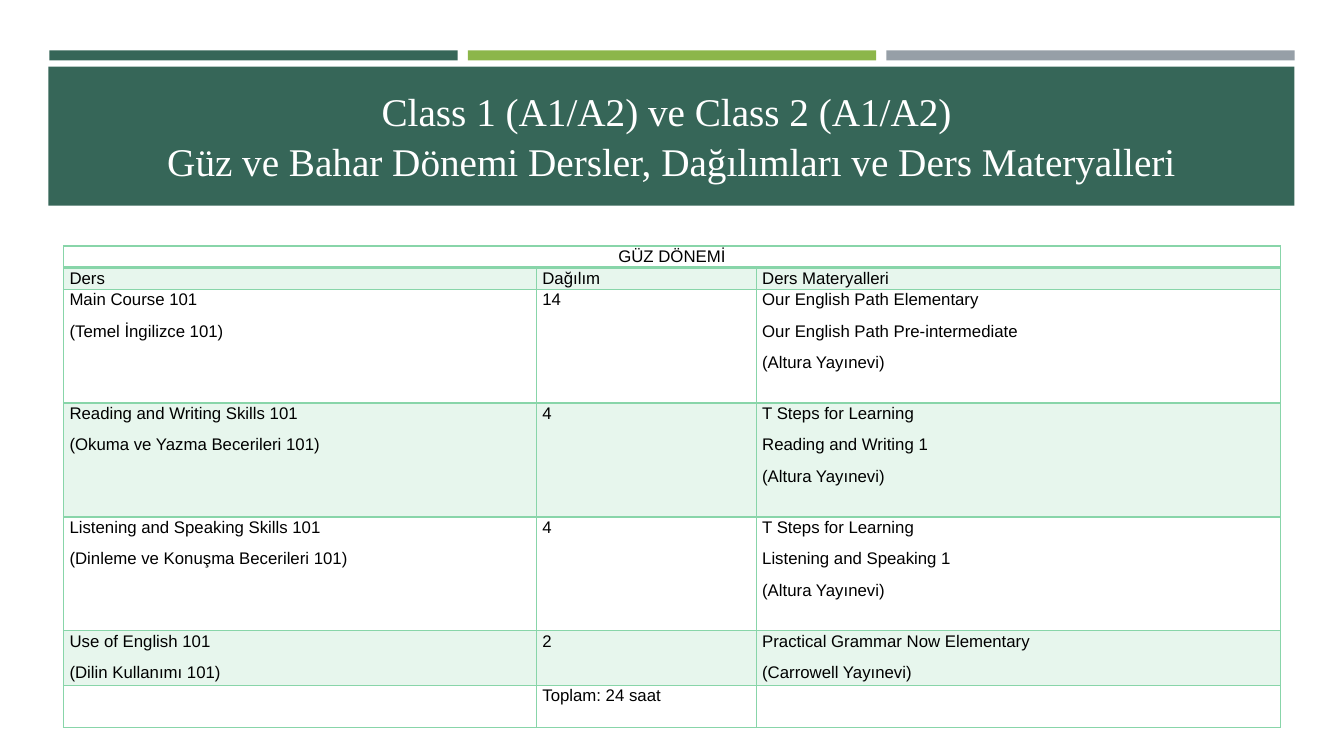
from lxml import etree
from pptx import Presentation
from pptx.dml.color import RGBColor
from pptx.enum.shapes import MSO_SHAPE as SHAPE
from pptx.enum.text import MSO_ANCHOR as ANCHOR, PP_ALIGN as ALIGN
from pptx.oxml.ns import qn
from pptx.util import Inches, Pt


def rgb(value):
    return RGBColor.from_string(value)


def apply(target, values):
    for name, value in values.items():
        setattr(target, name, value)


class SlideBuilder:
    """Holds the style and the current slide."""

    green, lime, grey, mint = "366658", "8CB64A", "969FA7", "88D5A9"
    title_font = {"name": "Times New Roman", "size": Pt(28)}
    cell_font = {"name": "Arial", "size": Pt(12), "bold": False}
    cell_margins = {"margin_left": Inches(0.06), "margin_right": Inches(0.06),
                    "margin_top": 0, "margin_bottom": 0}

    def __init__(self, prs):
        self.s = prs.slides.add_slide(prs.slide_layouts[6])

    def bar(self, box, color):
        sp = self.s.shapes.add_shape(SHAPE.RECTANGLE, *map(Inches, box))
        sp.shadow.inherit = False
        sp.fill.solid()
        sp.fill.fore_color.rgb = rgb(color)
        sp.line.fill.background()

    def title(self, box, lines):
        tf = self.s.shapes.add_textbox(*map(Inches, box)).text_frame
        apply(tf, {"word_wrap": True, "vertical_anchor": ANCHOR.BOTTOM})
        p = tf.paragraphs[0]
        apply(p, {"alignment": ALIGN.CENTER, "line_spacing": 1.07, "space_after": Pt(8)})
        for i, line in enumerate(lines):
            if i:
                p.add_line_break()
            r = p.add_run()
            r.text = line
            apply(r.font, self.title_font)
            r.font.color.rgb = rgb("FFFFFF")

    def border(self, cell, side, width):
        ln = etree.SubElement(cell._tc.get_or_add_tcPr(), qn(f"a:ln{side}"), w=str(Pt(width)))
        fill = etree.SubElement(ln, qn("a:solidFill"))
        etree.SubElement(fill, qn("a:srgbClr"), val=self.mint)

    def cell(self, cell, lines, banded, align, bottom):
        apply(cell, self.cell_margins)
        for side in "LRT":
            self.border(cell, side, 1)
        self.border(cell, "B", bottom)
        if banded:
            cell.fill.solid()
            cell.fill.fore_color.rgb = rgb(self.mint)
            color = cell._tc.tcPr.find(qn("a:solidFill"))[0]
            etree.SubElement(color, qn("a:alpha"), val="20000")
        else:
            cell.fill.background()
        tf = cell.text_frame
        for i, line in enumerate(lines):
            p = tf.add_paragraph() if i else tf.paragraphs[0]
            apply(p, {"alignment": align, "line_spacing": 1.07, "space_before": Pt(8 if i else 0)})
            r = p.add_run()
            r.text = line
            apply(r.font, self.cell_font)
            r.font.color.rgb = rgb("000000")

    def table(self, box, widths, heights, rows):
        tbl = self.s.shapes.add_table(len(rows), len(widths), *map(Inches, box)).table
        apply(tbl, {"first_row": False, "horz_banding": False})
        for col, width in zip(tbl.columns, widths):
            col.width = Inches(width)
        for i, (row, height, texts) in enumerate(zip(tbl.rows, heights, rows)):
            row.height = Inches(height)
            heading = i == 0
            for cell, lines in zip(row.cells, texts):
                self.cell(cell, lines, i % 2 == 1, ALIGN.CENTER if heading else ALIGN.LEFT,
                          2 if heading else 1)
        tbl.cell(0, 0).merge(tbl.cell(0, len(widths) - 1))


COURSES = [
    [["GÜZ DÖNEMİ"], [], []],
    [["Ders"], ["Dağılım"], ["Ders Materyalleri"]],
    [["Main Course 101", "(Temel İngilizce 101)"], ["14"],
     ["Our English Path Elementary", "Our English Path Pre-intermediate", "(Altura Yayınevi)"]],
    [["Reading and Writing Skills 101", "(Okuma ve Yazma Becerileri 101)"], ["4"],
     ["T Steps for Learning", "Reading and Writing 1", "(Altura Yayınevi)"]],
    [["Listening and Speaking Skills 101", "(Dinleme ve Konuşma Becerileri 101)"], ["4"],
     ["T Steps for Learning", "Listening and Speaking 1", "(Altura Yayınevi)"]],
    [["Use of English 101", "(Dilin Kullanımı 101)"], ["2"],
     ["Practical Grammar Now Elementary", "(Carrowell Yayınevi)"]],
    [[], ["Toplam: 24 saat"], []],
]


def main():
    prs = Presentation()
    apply(prs, {"slide_width": Inches(13.33), "slide_height": Inches(7.5)})
    b = SlideBuilder(prs)
    for i, color in enumerate([b.green, b.lime, b.grey]):
        b.bar((0.49 + 4.15 * i, 0.5, 4.05, 0.1), color)
    b.bar((0.48, 0.66, 12.36, 1.38), b.green)
    b.title((0.63, 0.8, 12.06, 1.08),
            ["Class 1 (A1/A2) ve Class 2 (A1/A2) ",
             "Güz ve Bahar Dönemi Dersler, Dağılımları ve Ders Materyalleri"])
    b.table((0.63, 2.44, 12.07, 4.72), (4.69, 2.18, 5.2),
            (0.2, 0.2, 1.13, 1.13, 1.13, 0.51, 0.42), COURSES)
    prs.save("out.pptx")


if __name__ == "__main__":
    main()
